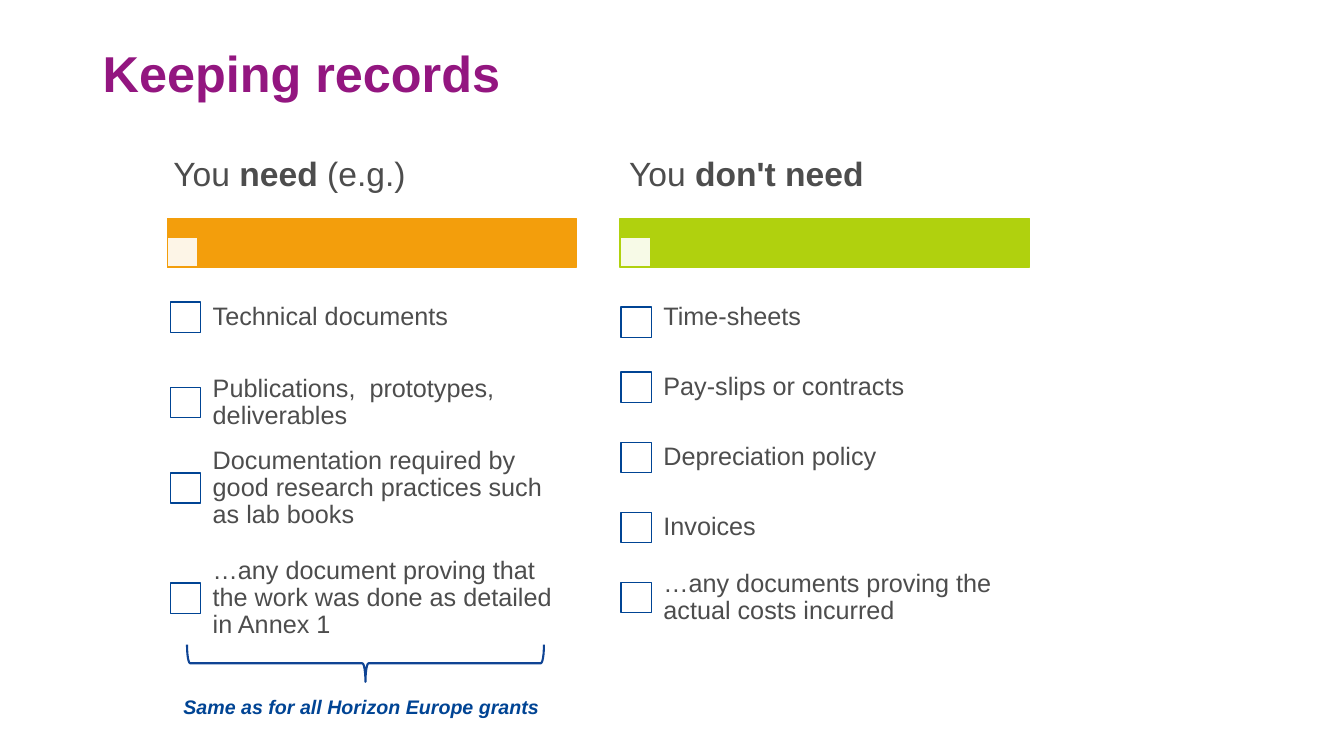
from dataclasses import dataclass

import pptx
import pptx.dml.color
import pptx.enum.shapes
import pptx.enum.text
import pptx.oxml
import pptx.oxml.ns
import pptx.util

Inches = pptx.util.Inches
Shapes = pptx.enum.shapes.MSO_SHAPE
Anchor = pptx.enum.text.MSO_ANCHOR

COLORS = {
    "title": "931680",
    "text": "4D4D4D",
    "white": "FFFFFF",
    "blue": "004494",
    "brace": "0F4494",
    "orange": "F39E0C",
    "green": "B0D10E",
}
FONT = "Arial"
LIST_TOP = 2.8
LIST_BOTTOM = 5.58
ROW_HEIGHT = (LIST_BOTTOM - LIST_TOP) / 4
TICK_SIZE = 0.3
COLUMN_WIDTH = 4.06
ITEM_WIDTH = 3.77
ITEM_INSETS = (0.14, 0.14, 0.14, 0.14)
HEADING_INSETS = (0.05, 0.03, 0.05, 0.03)


@dataclass
class Span:
    text: str
    bold: bool = False
    italic: bool = False


@dataclass
class Item:
    text: str
    height: float = ROW_HEIGHT
    tick_shift: float = 0


@dataclass
class Column:
    left: float
    color: str
    heading_left: float
    tick_left: float
    item_left: float
    heading: list[Span]
    items: list[Item]


COLUMNS = [
    Column(
        1.66, "orange", 1.67, 1.69, 1.97,
        [Span("You "), Span("need ", bold=True), Span("(e.g.)")],
        [
            Item("Technical documents"),
            Item("Publications,  prototypes, deliverables", height=1),
            Item("Documentation required by good research practices such as lab books"),
            Item("…any document proving that the work was done as detailed in Annex 1", height=1.49),
        ],
    ),
    Column(
        6.15, "green", 6.19, 6.16, 6.44,
        [Span("You "), Span("don't need", bold=True)],
        [
            Item("Time-sheets", tick_shift=0.05),
            Item("Pay-slips or contracts"),
            Item("Depreciation policy"),
            Item("Invoices"),
            Item("…any documents proving the actual costs incurred"),
        ],
    ),
]


def rgb(name: str) -> pptx.dml.color.RGBColor:
    return pptx.dml.color.RGBColor.from_string(COLORS[name])


def add_text(page, left: float, top: float, width: float, height: float,
             spans: list[Span], size: int, color: str, insets: tuple,
             anchor=Anchor.MIDDLE, line_spacing: float = 0.9) -> None:
    box = page.shapes.add_textbox(Inches(left), Inches(top), Inches(width), Inches(height))
    frame = box.text_frame
    frame.word_wrap = True
    frame.vertical_anchor = anchor
    (frame.margin_left, frame.margin_top,
     frame.margin_right, frame.margin_bottom) = map(Inches, insets)
    para = frame.paragraphs[0]
    para.line_spacing = line_spacing
    for span in spans:
        run = para.add_run()
        run.text = span.text
        run.font.name = FONT
        run.font.size = pptx.util.Pt(size)
        run.font.bold = span.bold
        run.font.italic = span.italic
        run.font.color.rgb = rgb(color)


def add_rectangle(page, left: float, top: float, width: float, height: float,
                  fill: str, line: str, opacity: int = 100) -> None:
    shape = page.shapes.add_shape(
        Shapes.RECTANGLE, Inches(left), Inches(top), Inches(width), Inches(height))
    shape.shadow.inherit = False
    shape.fill.solid()
    shape.fill.fore_color.rgb = rgb(fill)
    shape.line.color.rgb = rgb(line)
    shape.line.width = pptx.util.Pt(1)
    if opacity < 100:
        color = shape.fill._xPr.find(".//" + pptx.oxml.ns.qn("a:srgbClr"))
        alpha = pptx.oxml.parse_xml(
            f'<a:alpha {pptx.oxml.ns.nsdecls("a")} val="{opacity * 1000}"/>')
        color.append(alpha)


def add_column(page, column: Column) -> None:
    add_rectangle(page, column.left, 2.17, COLUMN_WIDTH, 0.48, column.color, column.color)
    add_rectangle(page, column.left, 2.35, TICK_SIZE, TICK_SIZE, "white", column.color, 90)
    add_text(page, column.heading_left, 1.31, COLUMN_WIDTH, 0.86,
             column.heading, 24, "text", HEADING_INSETS)
    top = LIST_TOP
    for item in column.items:
        tick_top = top + (item.height - TICK_SIZE) / 2 + item.tick_shift
        add_rectangle(page, column.tick_left, tick_top, TICK_SIZE, TICK_SIZE, "white", "blue")
        add_text(page, column.item_left, top, ITEM_WIDTH, item.height,
                 [Span(item.text)], 18, "text", ITEM_INSETS)
        top += item.height


def add_brace(page) -> None:
    brace = page.shapes.add_shape(
        Shapes.LEFT_BRACE, Inches(3.44), Inches(4.81), Inches(0.37), Inches(3.54))
    brace.rotation = 270
    brace.shadow.inherit = False
    brace.fill.background()
    brace.line.color.rgb = rgb("brace")
    brace.line.width = pptx.util.Pt(1.5)


def main() -> None:
    deck = pptx.Presentation()
    deck.slide_width = Inches(13.33)
    deck.slide_height = Inches(7.5)
    page = deck.slides.add_slide(deck.slide_layouts[6])
    add_text(page, 0.92, 0.51, 11.5, 0.52, [Span("Keeping records", bold=True)],
             36, "title", (0.1, 0.05, 0.1, 0), Anchor.BOTTOM)
    for column in COLUMNS:
        add_column(page, column)
    add_text(page, 1.72, 6.84, 3.8, 0.34,
             [Span("Same as for all Horizon Europe grants", bold=True, italic=True)],
             14, "blue", (0.1, 0.05, 0.1, 0.05), Anchor.TOP, 1)
    add_brace(page)
    deck.save("out.pptx")


if __name__ == "__main__":
    main()
